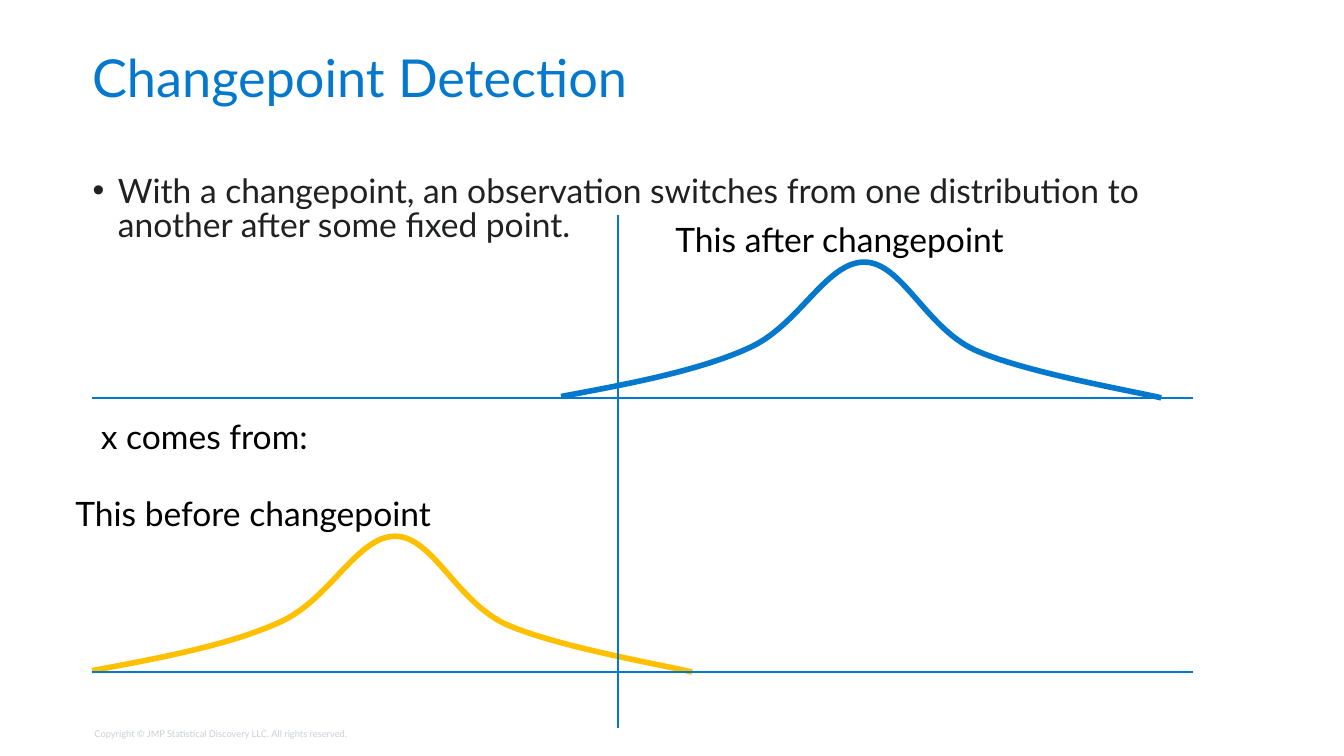
from dataclasses import dataclass

from lxml import etree
from pptx import Presentation
from pptx.dml.color import RGBColor
from pptx.enum.shapes import MSO_CONNECTOR
from pptx.enum.text import MSO_ANCHOR, MSO_AUTO_SIZE, PP_ALIGN
from pptx.oxml.ns import qn
from pptx.util import Pt

PX = 9144  # EMU per px, 100 px to the inch
STRAIGHT = MSO_CONNECTOR.STRAIGHT
LEFT = PP_ALIGN.LEFT
TOP, MIDDLE, BOTTOM = MSO_ANCHOR.TOP, MSO_ANCHOR.MIDDLE, MSO_ANCHOR.BOTTOM
FIXED, FIT_SHAPE = MSO_AUTO_SIZE.NONE, MSO_AUTO_SIZE.SHAPE_TO_FIT_TEXT


@dataclass(frozen=True)
class Theme:
    font: str = "Lato"
    blue: str = "0378CD"
    yellow: str = "FFC000"
    ink: str = "202122"
    black: str = "000000"
    pale: str = "CBCFD7"
    title_size: int = 56
    body_size: int = 36
    footer_size: int = 10
    axis_width: int = 2
    curve_width: int = 6


# Start point, then three points for each Bezier segment, from the curve's top left
BELL = [
    (0, 200),
    (102, 181), (204, 162), (279, 128),
    (354, 95), (394, 0), (451, 0),
    (507, 0), (542, 97), (616, 131),
    (690, 164), (846, 191), (893, 202),
]


class SlideBuilder:
    def __init__(self, slide, theme):
        self.slide = slide
        self.theme = theme

    def set_text(self, shape, text, size, color, anchor, spacing=None):
        frame = shape.text_frame
        frame.margin_left = frame.margin_right = 0
        frame.margin_top = frame.margin_bottom = 0
        frame.vertical_anchor = anchor
        frame.text = text
        paragraph = frame.paragraphs[0]
        paragraph.alignment = LEFT
        paragraph.space_before = Pt(0)
        if spacing:
            paragraph.line_spacing = spacing
        paragraph.font.name = self.theme.font
        paragraph.font.size = Pt(size)
        paragraph.font.color.rgb = RGBColor.from_string(color)

    def placeholder(self, index, box, text, size, color, anchor, spacing):
        holder = self.slide.placeholders[index]
        holder.left, holder.top, holder.width, holder.height = (v * PX for v in box)
        holder.text_frame.auto_size = FIXED
        if index:
            properties = holder.text_frame.paragraphs[0]._p.get_or_add_pPr()
            properties.set("marL", "0")
            properties.set("indent", "0")
            etree.SubElement(properties, qn("a:buNone"))
        self.set_text(holder, text, size, color, anchor, spacing)

    def label(self, box, text, size, color, anchor=TOP):
        shape = self.slide.shapes.add_textbox(*(v * PX for v in box))
        shape.text_frame.word_wrap = False
        shape.text_frame.auto_size = FIT_SHAPE
        self.set_text(shape, text, size, color, anchor)

    def stroke(self, shape, color, width):
        shape.line.color.rgb = RGBColor.from_string(color)
        shape.line.width = Pt(width)

    def bell(self, left, top, color):
        start, *rest = [((left + x) * PX, (top + y) * PX) for x, y in BELL]
        builder = self.slide.shapes.build_freeform(*start)
        builder.add_line_segments(rest, close=False)
        curve = builder.convert_to_shape()
        curve.shadow.inherit = False
        curve.fill.background()
        self.stroke(curve, color, self.theme.curve_width)

        # Join each three straight steps into one Bezier segment
        outline = next(curve._element.iter(qn("a:path")))
        steps = outline.findall(qn("a:lnTo"))
        for i in range(0, len(steps), 3):
            segment = etree.SubElement(outline, qn("a:cubicBezTo"))
            for step in steps[i:i + 3]:
                segment.append(step[0])
                outline.remove(step)

    def axis(self, x1, y1, x2, y2):
        line = self.slide.shapes.add_connector(
            STRAIGHT, x1 * PX, y1 * PX, x2 * PX, y2 * PX)
        self.stroke(line, self.theme.blue, self.theme.axis_width)
        etree.SubElement(line._element.spPr, qn("a:effectLst"))


def main():
    theme = Theme()
    deck = Presentation()
    deck.slide_width, deck.slide_height = 2000 * PX, 1125 * PX
    page = SlideBuilder(deck.slides.add_slide(deck.slide_layouts[1]), theme)

    page.label((137, 1083, 550, 17), " Copyright © JMP Statistical Discovery LLC. All rights reserved.",
               theme.footer_size, theme.pale, BOTTOM)
    page.placeholder(0, (137, 78, 1725, 85), "Changepoint Detection",
                     theme.title_size, theme.blue, MIDDLE, 0.9)
    page.placeholder(1, (138, 262, 1725, 751),
                     "With a changepoint, an observation switches from one "
                     "distribution to another after some fixed point.",
                     theme.body_size, theme.ink, TOP, 0.85)

    page.bell(835, 390, theme.blue)
    page.bell(137, 798, theme.yellow)

    for box, text in [
        ((150, 619, 326, 61), "x comes from:"),
        ((1005, 325, 513, 61), "This after changepoint"),
        ((112, 734, 538, 61), "This before changepoint"),
    ]:
        page.label(box, text, theme.body_size, theme.black)

    for baseline in (1000, 592):
        page.axis(137, baseline, 1775, baseline)
    page.axis(920, 320, 920, 1083)

    deck.save("out.pptx")


if __name__ == "__main__":
    main()
